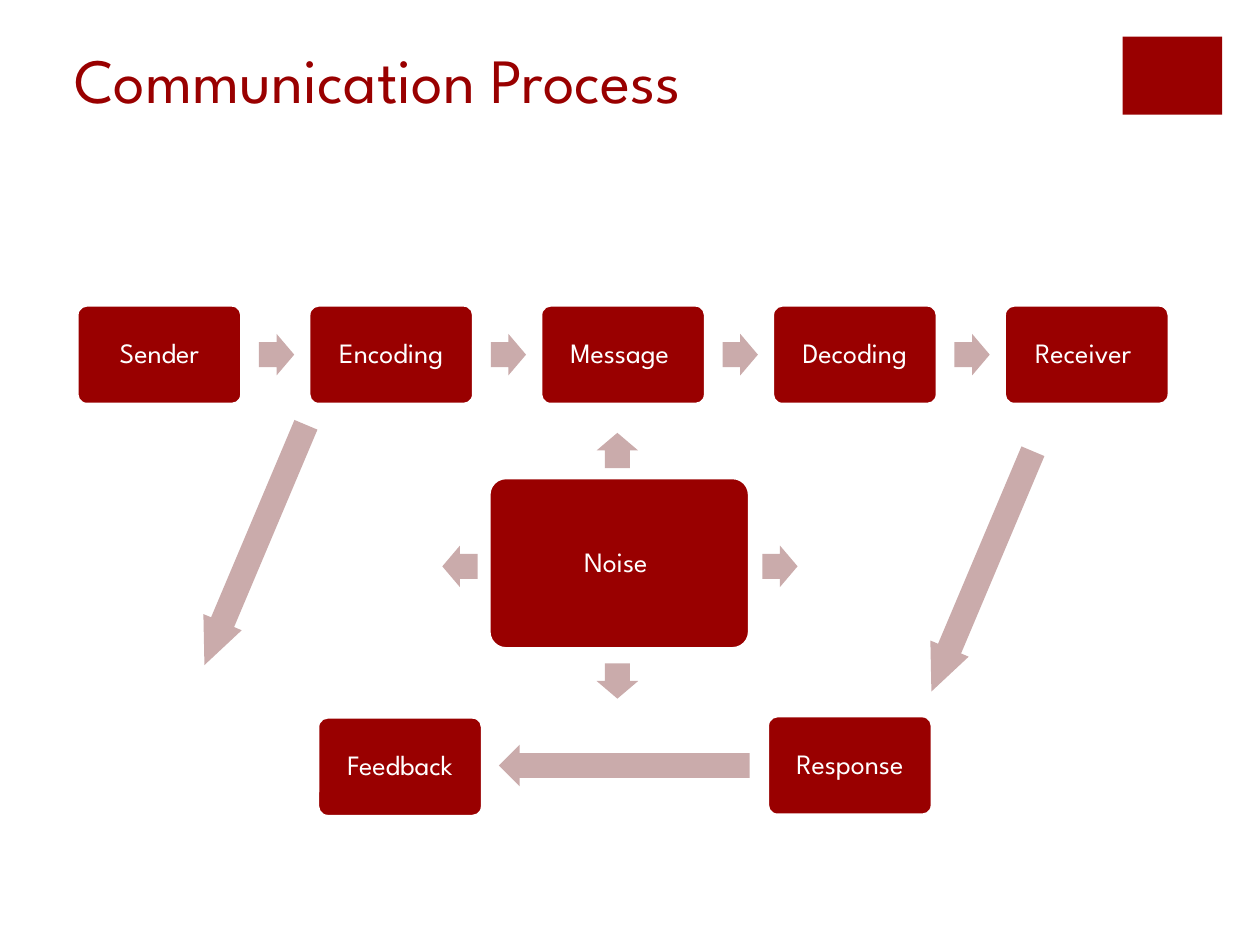
import pptx
import pptx.util
import pptx.dml.color
import pptx.enum.shapes
import pptx.enum.text

SHAPES = pptx.enum.shapes.MSO_SHAPE
ANCHOR = pptx.enum.text.MSO_ANCHOR
ALIGN = pptx.enum.text.PP_ALIGN


def color(hex_value):
    return pptx.dml.color.RGBColor.from_string(hex_value)


class ProcessSlide:
    FONT = "League Spartan"
    RED, ROSE, WHITE = "990000", "CAABAB", "FFFFFF"
    COLUMNS, ROWS = 100, 75
    STEP_WIDTH, STEP_HEIGHT = 13.1, 7.9

    def __init__(self, presentation):
        self.column = presentation.slide_width / self.COLUMNS
        self.row = presentation.slide_height / self.ROWS
        self.slide = presentation.slides.add_slide(presentation.slide_layouts[6])

    def place(self, left, top, width, height):
        return (round(left * self.column), round(top * self.row),
                round(width * self.column), round(height * self.row))

    def shape(self, kind, left, top, width, height, fill):
        shape = self.slide.shapes.add_shape(kind, *self.place(left, top, width, height))
        shape.shadow.inherit = False
        shape.fill.solid()
        shape.fill.fore_color.rgb = color(fill)
        shape.line.fill.background()
        return shape

    def label(self, frame, text, size, text_color):
        frame.word_wrap = True
        frame.text = text
        font = frame.paragraphs[0].runs[0].font
        font.name = self.FONT
        font.size = pptx.util.Pt(size)
        font.color.rgb = color(text_color)

    def title(self, text, left, top, width, height):
        box = self.slide.shapes.add_textbox(*self.place(left, top, width, height))
        box.text_frame.vertical_anchor = ANCHOR.TOP
        self.label(box.text_frame, text, 36, self.RED)

    def step(self, text, left, top, width=STEP_WIDTH, height=STEP_HEIGHT):
        step = self.shape(SHAPES.ROUNDED_RECTANGLE, left, top, width, height, self.RED)
        step.adjustments[0] = 0.1
        step.line.color.rgb = color(self.WHITE)
        step.line.width = pptx.util.Pt(2)
        frame = step.text_frame
        frame.margin_left = frame.margin_right = pptx.util.Inches(0.07)
        frame.margin_top = frame.margin_bottom = pptx.util.Inches(0.07)
        frame.vertical_anchor = ANCHOR.MIDDLE
        self.label(frame, text, 16, self.WHITE)
        frame.paragraphs[0].alignment = ALIGN.CENTER
        frame.paragraphs[0].line_spacing = 0.9

    def arrow(self, center_column, center_row, rotation=0, length=2.8, head=0.5):
        thickness = 3.3
        arrow = self.shape(SHAPES.RIGHT_ARROW, center_column - length / 2,
                           center_row - thickness / 2, length, thickness, self.ROSE)
        arrow.adjustments[0] = 0.6
        arrow.adjustments[1] = head
        arrow.rotation = rotation


def main():
    presentation = pptx.Presentation()
    presentation.slide_width = pptx.util.Inches(10)
    presentation.slide_height = pptx.util.Inches(7.5)
    process = ProcessSlide(presentation)

    process.shape(SHAPES.RECTANGLE, 89.1, 2.9, 7.9, 6.2, process.RED)
    process.title("Communication Process", 4.9, 2.7, 95.1, 13.5)

    stages = ["Sender", "Encoding", "Message ", "Decoding", "Receiver "]
    first_left, pitch, stage_top = 6.1, 18.4, 24.2
    for index, stage in enumerate(stages):
        left = first_left + index * pitch
        process.step(stage, left, stage_top)
        if index < len(stages) - 1:
            process.arrow(left + 15.85, stage_top + process.STEP_HEIGHT / 2)

    noise_arrows = [(49, 35.75, 270), (36.5, 44.95, 180), (49, 54.05, 90), (61.9, 44.95, 0)]
    for center_column, center_row, rotation in noise_arrows:
        process.arrow(center_column, center_row, rotation)
    process.step("Noise ", 38.8, 37.9, 20.7, 13.6)

    process.step("Feedback", 25.2, 56.9)
    process.step("Response", 60.9, 56.8)
    for center_column, center_row in [(77.95, 45.35), (20.25, 43.25)]:
        process.arrow(center_column, center_row, 112.9, 20.7, 1.12)
    process.arrow(49.55, 60.75, 180, 19.9)

    presentation.save("out.pptx")


if __name__ == "__main__":
    main()
